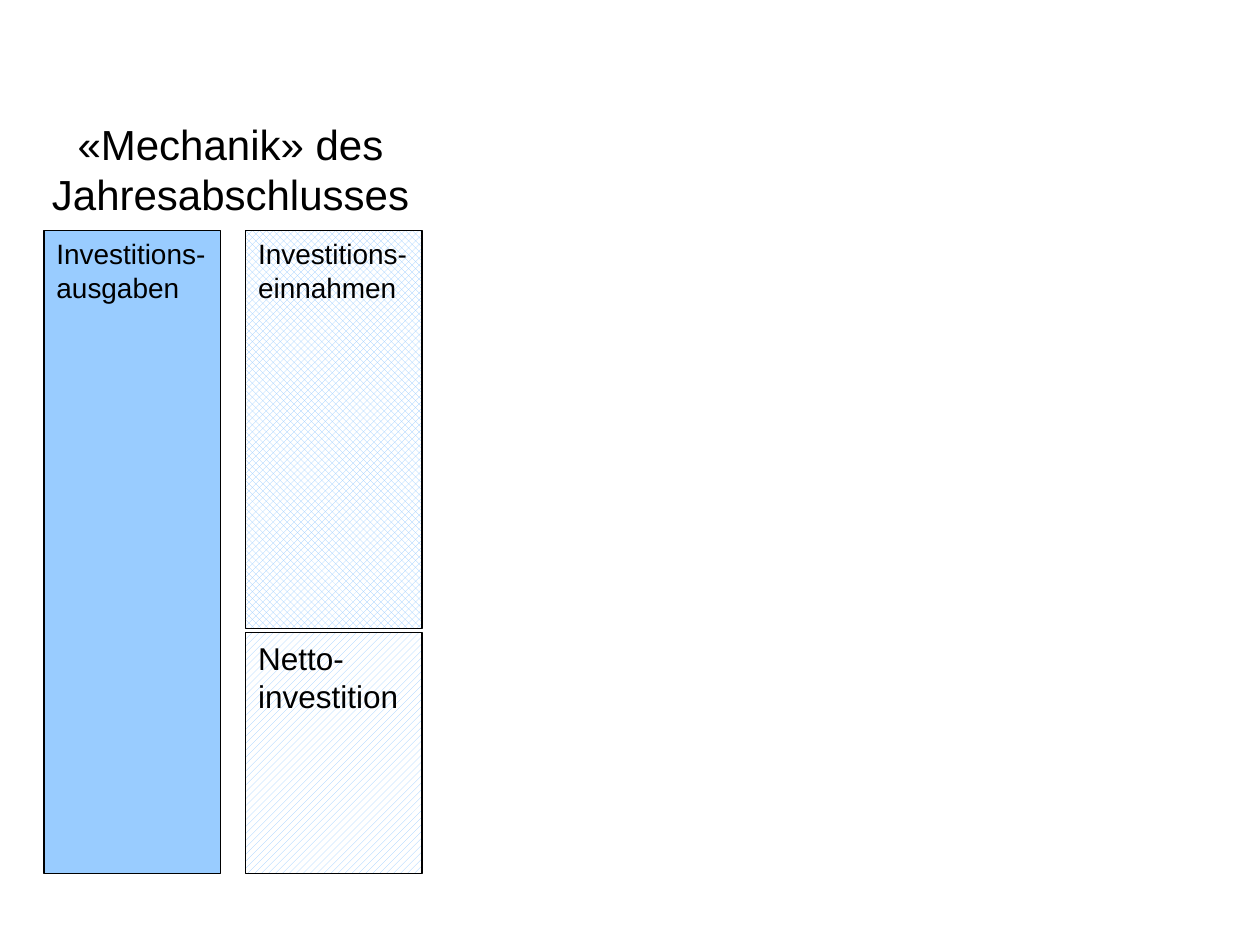
from dataclasses import dataclass

from pptx import Presentation
from pptx.dml.color import RGBColor
from pptx.enum import dml, shapes, text
from pptx.util import Pt


@dataclass(frozen=True)
class Theme:
    font: str = "Arial"
    ink: RGBColor = RGBColor(0x00, 0x00, 0x00)
    paper: RGBColor = RGBColor(0xFF, 0xFF, 0xFF)
    blue: RGBColor = RGBColor(0x99, 0xCC, 0xFF)
    title: float = 24
    label: float = 16
    net_label: float = 18
    outline: float = 0.75


THEME = Theme()


def place(sp, box):
    sp.left, sp.top, sp.width, sp.height = (Pt(v) for v in box)


def set_text(tf, wording, size, align, anchor):
    tf.text = wording
    tf.word_wrap = True
    tf.auto_size = text.MSO_AUTO_SIZE.NONE
    tf.vertical_anchor = anchor
    p = tf.paragraphs[0]
    p.alignment = align
    font = p.runs[0].font
    font.name, font.size = THEME.font, Pt(size)
    font.color.rgb = THEME.ink


def add_title(s, box, wording):
    sp = s.shapes.title
    place(sp, box)
    set_text(sp.text_frame, wording, THEME.title,
             text.PP_ALIGN.CENTER, text.MSO_ANCHOR.MIDDLE)


def add_block(parent, box, wording, size, pattern=None):
    """Outlined block, solid blue unless a pattern is given."""
    sp = parent.shapes.add_shape(shapes.MSO_SHAPE.RECTANGLE, *(Pt(v) for v in box))
    sp.shadow.inherit = False
    fill = sp.fill
    if pattern is None:
        fill.solid()
        fill.fore_color.rgb = THEME.blue
    else:
        fill.patterned()
        fill.pattern = pattern
        fill.fore_color.rgb = THEME.blue
        fill.back_color.rgb = THEME.paper
    sp.line.color.rgb = THEME.ink
    sp.line.width = Pt(THEME.outline)
    set_text(sp.text_frame, wording, size,
             text.PP_ALIGN.LEFT, text.MSO_ANCHOR.TOP)


def add_investment_account(s, box):
    """Expenditure on the left; income and the net balance stacked on the right."""
    x, y, w, h = box
    column_gap, row_gap, net_h = 14.4, 2.2, 137.5
    col_w = (w - column_gap) / 2
    right = x + col_w + column_gap
    group = s.shapes.add_group_shape()
    add_block(group, (x, y, col_w, h), "Investitions-ausgaben", THEME.label)
    add_block(group, (right, y, col_w, h - net_h - row_gap),
              "Investitions-einnahmen", THEME.label,
              dml.MSO_PATTERN.SOLID_DIAMOND)
    add_block(group, (right, y + h - net_h, col_w, net_h),
              "Netto-investition", THEME.net_label,
              dml.MSO_PATTERN.WIDE_UPWARD_DIAGONAL)


def main():
    prs = Presentation()
    prs.slide_width, prs.slide_height = Pt(720), Pt(540)
    s = prs.slides.add_slide(prs.slide_layouts.get_by_name("Title Only"))
    add_title(s, (7.2, 61.2, 249, 70.6), "«Mechanik» des Jahresabschlusses")
    add_investment_account(s, (25.2, 131.8, 216, 367.2))
    prs.save("out.pptx")


if __name__ == "__main__":
    main()
